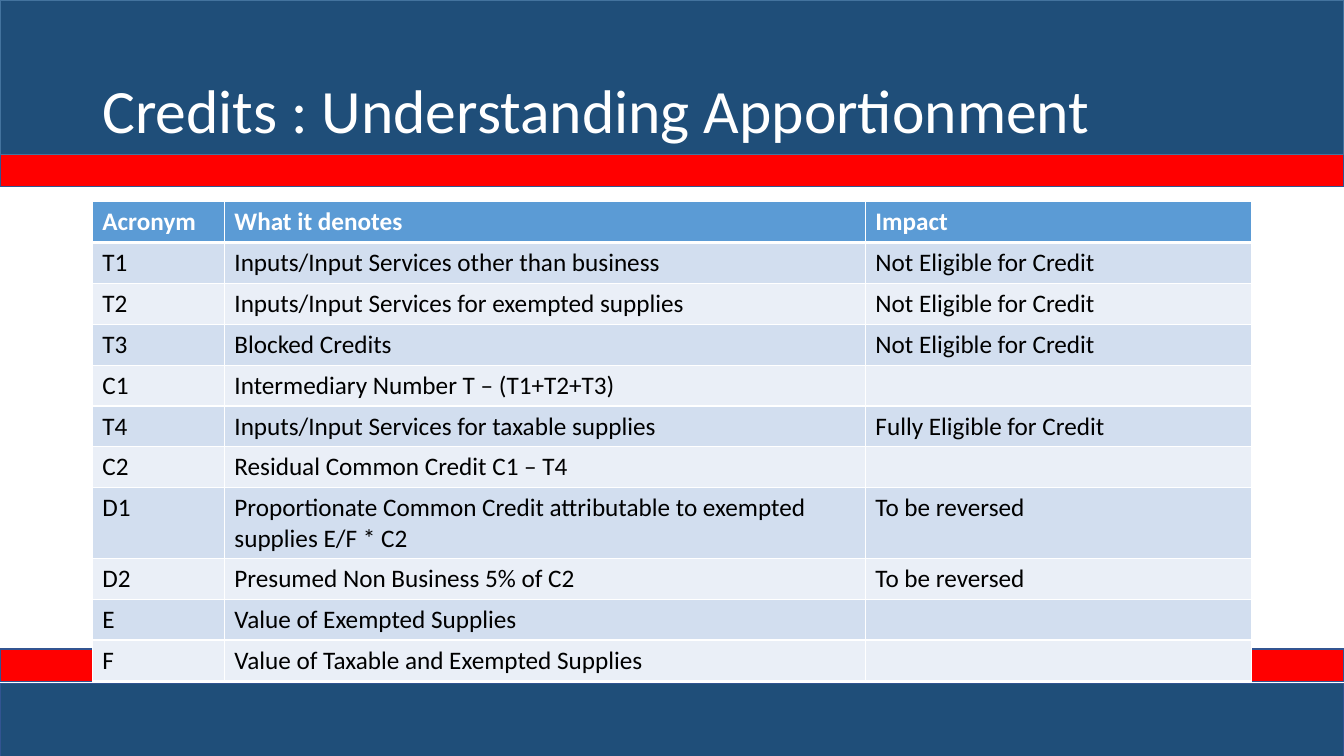
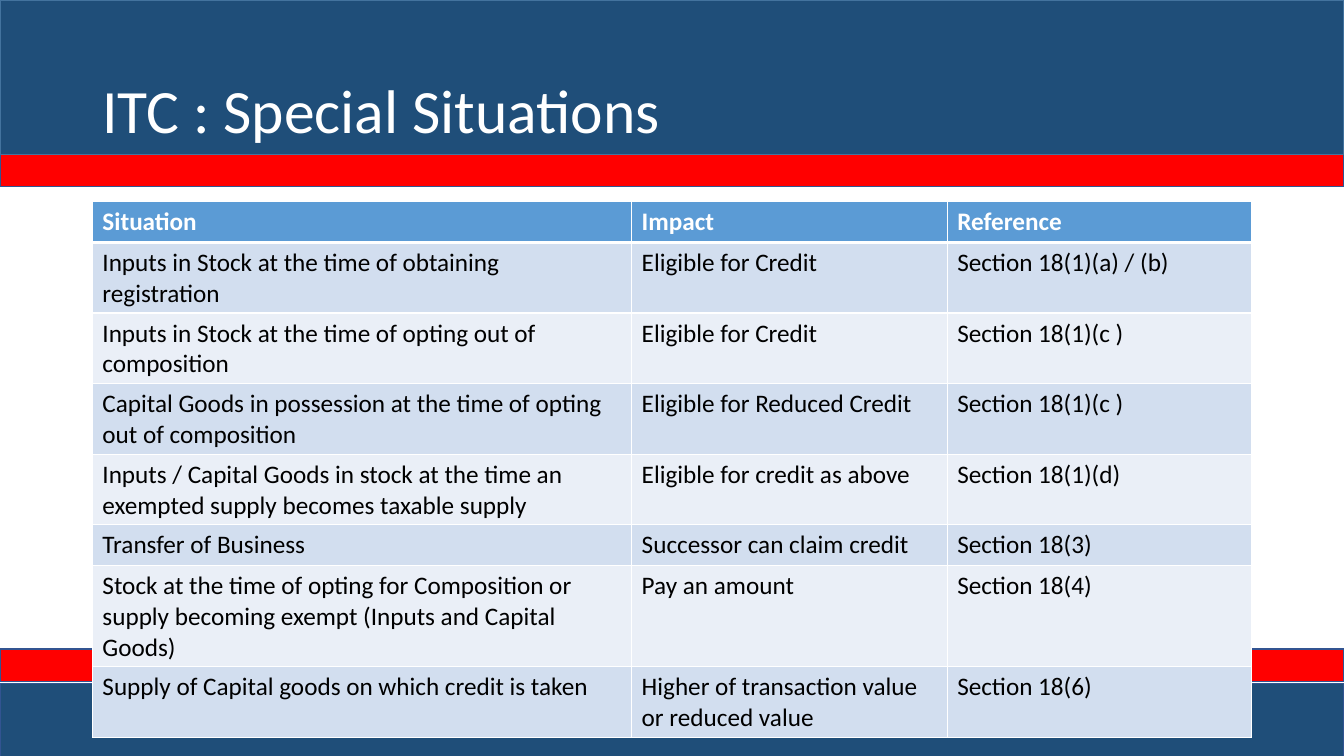
"""Build two tax-credit table slides with shared bands and title style."""
from lxml.etree import SubElement
from pptx import Presentation
from pptx.dml.color import RGBColor
from pptx.enum.shapes import MSO_SHAPE
from pptx.enum.text import MSO_ANCHOR
from pptx.oxml.ns import qn
from pptx.util import Pt

FONT = "Calibri"
COLORS = {
    "navy": "1F4E79", "red": "FF0000", "edge": "325491", "top_edge": "43739E",
    "header": "5B9BD5", "odd": "D2DEEF", "even": "EAEFF7",
    "white": "FFFFFF", "black": "000000",
}
WIDTH, HEIGHT = 960, 540
LEFT, CONTENT_W = 66, 828
TABLE_TOP, ROW_H = 144, 29.2

BANDS = [
    (463.7, 23, "red", "edge"),
    (110.2, 23, "red", "edge"),
    (488.2, 53, "navy", "edge"),
    (0, 110.2, "navy", "top_edge"),
]

SLIDES = [
    {
        "title": "Credits : Understanding Apportionment",
        "cols": (94.3, 457.9, 275.8),
        "rows": [
            ("Acronym", "What it denotes", "Impact"),
            ("T1", "Inputs/Input Services other than business", "Not Eligible for Credit"),
            ("T2", "Inputs/Input Services for exempted supplies", "Not Eligible for Credit"),
            ("T3", "Blocked Credits", "Not Eligible for Credit"),
            ("C1", "Intermediary Number T – (T1+T2+T3)", ""),
            ("T4", "Inputs/Input Services for taxable supplies", "Fully Eligible for Credit"),
            ("C2", "Residual Common Credit C1 – T4", ""),
            ("D1", "Proportionate Common Credit attributable to exempted supplies E/F * C2",
             "To be reversed"),
            ("D2", "Presumed Non Business 5% of C2", "To be reversed"),
            ("E", "Value of Exempted Supplies", ""),
            ("F", "Value of Taxable and Exempted Supplies", ""),
        ],
    },
    {
        "title": "ITC : Special Situations",
        "cols": (385.2, 225.4, 217.4),
        "rows": [
            ("Situation", "Impact", "Reference"),
            ("Inputs in Stock at the time of obtaining registration",
             "Eligible for Credit", "Section 18(1)(a) / (b)"),
            ("Inputs in Stock at the time of opting out of composition",
             "Eligible for Credit", "Section 18(1)(c )"),
            ("Capital Goods in possession at the time of opting out of composition",
             "Eligible for Reduced Credit", "Section 18(1)(c )"),
            ("Inputs / Capital Goods in stock at the time an exempted supply becomes taxable supply",
             "Eligible for credit as above", "Section 18(1)(d)"),
            ("Transfer of Business", "Successor can claim credit", "Section 18(3)"),
            ("Stock at the time of opting for Composition or supply becoming exempt "
             "(Inputs and Capital Goods)", "Pay an amount", "Section 18(4)"),
            ("Supply of Capital goods on which credit is taken",
             "Higher of transaction value or reduced value", "Section 18(6)"),
        ],
    },
]


def rgb(name):
    return RGBColor.from_string(COLORS[name])


def set_font(p, size, color, bold=False):
    p.font.name, p.font.size, p.font.bold = FONT, Pt(size), bold
    p.font.color.rgb = rgb(color)


def add_bands(s):
    for top, height, fill, edge in BANDS:
        sp = s.shapes.add_shape(MSO_SHAPE.RECTANGLE, 0, Pt(top), Pt(WIDTH), Pt(height))
        sp.shadow.inherit = False
        sp.fill.solid()
        sp.fill.fore_color.rgb = rgb(fill)
        sp.line.color.rgb = rgb(edge)
        sp.line.width = Pt(1)


def add_title(s, text):
    tf = s.shapes.add_textbox(Pt(LEFT), Pt(28.8), Pt(CONTENT_W), Pt(104.4)).text_frame
    tf.word_wrap = True
    tf.vertical_anchor = MSO_ANCHOR.MIDDLE
    p = tf.paragraphs[0]
    p.text = text
    p.line_spacing = 0.9
    set_font(p, 44, "white")


def set_borders(cell, top, bottom):
    tc_pr = cell._tc.get_or_add_tcPr()
    for side, width in (("L", 1), ("R", 1), ("T", top), ("B", bottom)):
        ln = SubElement(tc_pr, qn(f"a:ln{side}"), w=str(Pt(width)))
        fill = SubElement(ln, qn("a:solidFill"))
        SubElement(fill, qn("a:srgbClr"), val=COLORS["white"])


def add_table(s, cols, rows):
    frame = s.shapes.add_table(len(rows), len(cols), Pt(LEFT), Pt(TABLE_TOP),
                               Pt(CONTENT_W), Pt(ROW_H * len(rows)))
    table = frame.table
    for column, width in zip(table.columns, cols):
        column.width = Pt(width)
    for i, row in enumerate(rows):
        table.rows[i].height = Pt(ROW_H)
        is_header = i == 0
        fill = "header" if is_header else ("even", "odd")[i % 2]
        for j, text in enumerate(row):
            cell = table.cell(i, j)
            set_borders(cell, top=3 if i == 1 else 1, bottom=3 if is_header else 1)
            cell.fill.solid()
            cell.fill.fore_color.rgb = rgb(fill)
            p = cell.text_frame.paragraphs[0]
            p.text = text
            set_font(p, 18, "white" if is_header else "black", is_header)


def main():
    prs = Presentation()
    prs.slide_width, prs.slide_height = Pt(WIDTH), Pt(HEIGHT)
    for content in SLIDES:
        s = prs.slides.add_slide(prs.slide_layouts[6])
        add_bands(s)
        add_title(s, content["title"])
        add_table(s, content["cols"], content["rows"])
    prs.save("out.pptx")


if __name__ == "__main__":
    main()
